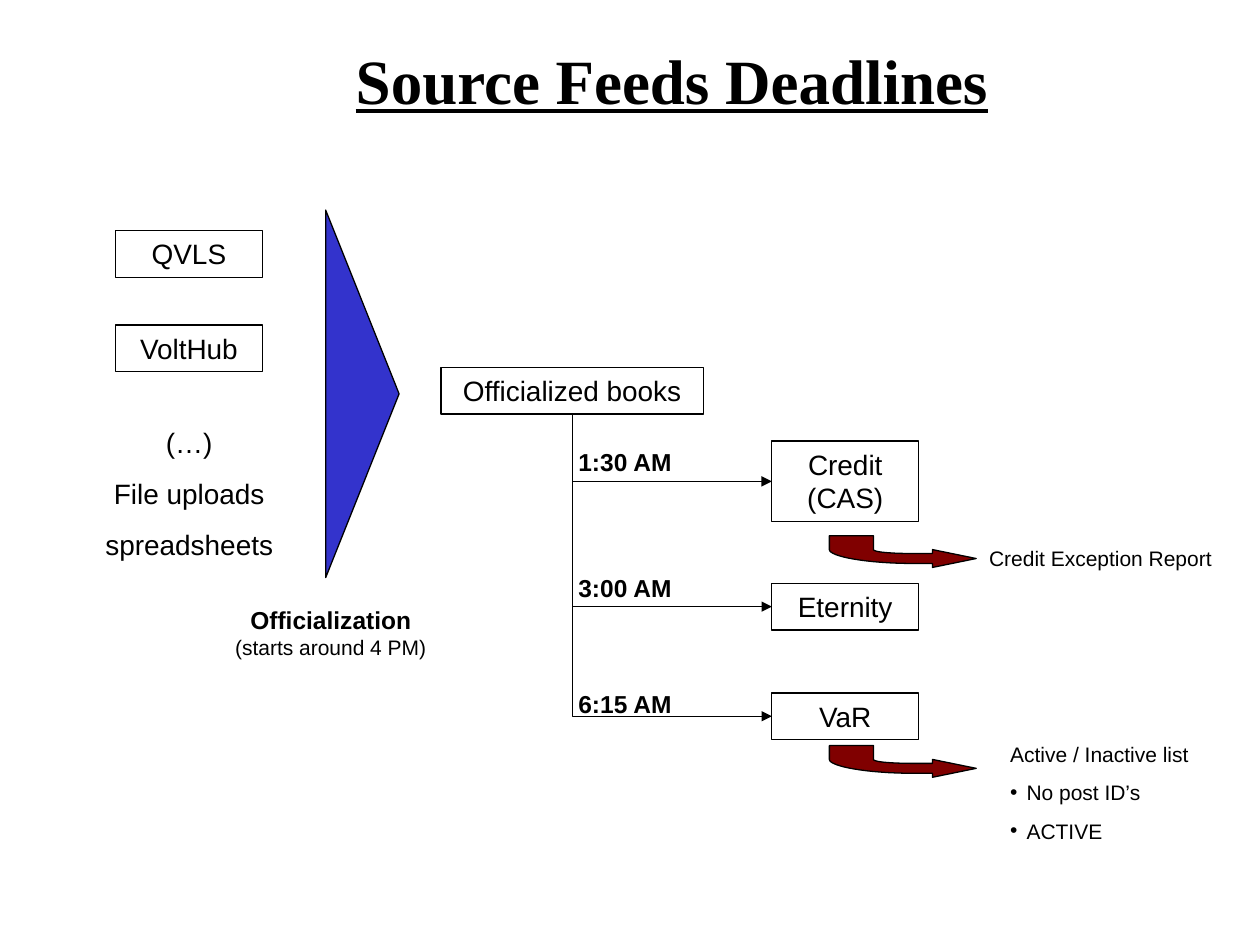
import pptx
import pptx.dml.color
import pptx.enum.shapes
import pptx.enum.text
import pptx.oxml.ns
import pptx.util
from lxml import etree

Cm, Pt, qn = pptx.util.Cm, pptx.util.Pt, pptx.oxml.ns.qn
SHAPES = pptx.enum.shapes.MSO_SHAPE
ALIGN = pptx.enum.text.PP_ALIGN
BLACK, BLUE, MAROON = "000000", "3333CC", "800000"

TITLE = "Source Feeds Deadlines"
SOURCES = ["QVLS", "VoltHub"]
UPLOADS = ["(…)", "File uploads", "spreadsheets"]
BOOKS = "Officialized books"
OFFICIALIZATION = [("Officialization ", 14, True), ("(starts around 4 PM)", 12, False)]
FEEDS = [
    ("1:30 AM", 8.89, "Credit (CAS)", 8.89, 1.63),
    ("3:00 AM", 11.43, "Eternity", 11.76, 0.94),
    ("6:15 AM", 13.76, "VaR", 13.97, 0.94),
]
CREDIT_REPORT = "Credit Exception Report"
VAR_REPORT = ["Active / Inactive list", "No post ID’s", "ACTIVE"]

SOURCE_X, SOURCE_Y, SOURCE_STEP = 2.33, 4.65, 1.9
BOX_W, BOX_H = 2.96, 0.94
BOOKS_X, BOOKS_Y, BOOKS_W = 8.89, 7.41, 5.29
TARGET_X = 15.56
ARROW_X, ARROW_TOPS = 16.72, (10.8, 15.03)
ARROW_OUTER = [(0, 0.28), (0, 0.42), (0.76, 0.56), (1.69, 0.56)]
ARROW_HEAD = [(2.08, 0.56), (2.08, 0.64), (2.96, 0.46), (2.08, 0.28), (2.08, 0.36)]
ARROW_INNER = [(1.69, 0.36), (1.24, 0.36), (0.89, 0.33), (0.89, 0.28)]


def color(hex_code):
    return pptx.dml.color.RGBColor.from_string(hex_code)


def write(frame, paragraphs, align=ALIGN.CENTER, before=10, font="Arial", underline=None):
    """Fill a text frame with paragraphs, each a list of (text, size, bold) runs."""
    frame.word_wrap = True
    for number, runs in enumerate(paragraphs):
        paragraph = frame.add_paragraph() if number else frame.paragraphs[0]
        paragraph.alignment, paragraph.space_before = align, Pt(before)
        for text, size, bold in runs:
            run = paragraph.add_run()
            run.text = text
            run.font.name, run.font.size = font, Pt(size)
            run.font.bold, run.font.underline = bold, underline
            run.font.color.rgb = color(BLACK)


def outline(shape, fill=None):
    shape.shadow.inherit = False
    if fill:
        shape.fill.solid()
        shape.fill.fore_color.rgb = color(fill)
    else:
        shape.fill.background()
    shape.line.color.rgb, shape.line.width = color(BLACK), Pt(0.75)


def add_box(slide, text, *place):
    box = slide.shapes.add_shape(SHAPES.RECTANGLE, *map(Cm, place))
    outline(box)
    box.text_frame.vertical_anchor = pptx.enum.text.MSO_ANCHOR.TOP
    write(box.text_frame, [[(text, 16, False)]])


def add_label(slide, place, paragraphs, **style):
    label = slide.shapes.add_textbox(*map(Cm, place))
    write(label.text_frame, paragraphs, **style)


def add_feed_line(slide, x, y, end_x, end_y):
    """Draw a line down, then right, ending in an arrowhead."""
    run, drop = end_x - x, end_y - y
    left, top = x + (run - drop) / 2, y + (drop - run) / 2
    line = slide.shapes.add_connector(
        pptx.enum.shapes.MSO_CONNECTOR.ELBOW,
        *map(Cm, (left, top, left + drop, top + run)))
    line.line.color.rgb, line.line.width = color(BLACK), Pt(0.75)
    properties = line._element.spPr
    properties.find(qn("a:prstGeom")).set("prst", "bentConnector2")
    transform = properties.find(qn("a:xfrm"))
    transform.set("rot", "16200000")
    transform.set("flipH", "1")
    etree.SubElement(properties.find(qn("a:ln")), qn("a:tailEnd"), type="triangle")
    etree.SubElement(properties, qn("a:effectLst"))


def curve(points, steps=16):
    """Return points along a cubic curve."""
    weights = [((1 - t) ** 3, 3 * t * (1 - t) ** 2, 3 * t * t * (1 - t), t ** 3)
               for t in (step / steps for step in range(steps + 1))]
    return [tuple(sum(w * point[axis] for w, point in zip(row, points)) for axis in (0, 1))
            for row in weights]


def add_report_arrow(slide, x, y):
    corners = curve(ARROW_OUTER) + ARROW_HEAD + curve(ARROW_INNER) + [(0.89, 0)]
    builder = slide.shapes.build_freeform(Cm(x), Cm(y))
    builder.add_line_segments([(Cm(x + dx), Cm(y + dy)) for dx, dy in corners], close=True)
    outline(builder.convert_to_shape(), MAROON)


def place_holder(holder, *place):
    holder.left, holder.top, holder.width, holder.height = map(Cm, place)
    holder.text_frame.auto_size = pptx.enum.text.MSO_AUTO_SIZE.NONE
    return holder.text_frame


def add_var_report(holder):
    frame = place_holder(holder, 20.11, 14.82, 4.23, 2.31)
    write(frame, [[(text, 12, False)] for text in VAR_REPORT], ALIGN.LEFT, 7.5)
    for number, paragraph in enumerate(frame.paragraphs):
        properties = paragraph._p.get_or_add_pPr()
        properties.set("marL", str(Cm(0.33)))
        properties.set("indent", str(-Cm(0.33)))
        if number:
            etree.SubElement(properties, qn("a:buChar"), char="•")
        else:
            etree.SubElement(properties, qn("a:buNone"))


def main():
    deck = pptx.Presentation()
    deck.slide_width, deck.slide_height = Cm(25.4), Cm(19.05)
    slide = deck.slides.add_slide(deck.slide_layouts[1])
    heading = place_holder(slide.shapes.title, 2.75, 0, 21.59, 3.18)
    write(heading, [[(TITLE, 36, True)]], before=0, font="Times New Roman", underline=True)

    for row, source in enumerate(SOURCES):
        add_box(slide, source, SOURCE_X, SOURCE_Y + row * SOURCE_STEP, BOX_W, BOX_H)
    add_label(slide, (1.59, 8.46, 4.45, 3), [[(text, 16, False)] for text in UPLOADS])

    funnel = slide.shapes.add_shape(
        SHAPES.ISOSCELES_TRIANGLE, *map(Cm, (3.6, 7.2, 7.41, 1.48)))
    funnel.rotation = 90
    outline(funnel, BLUE)
    add_label(slide, (4.23, 12.07, 4.88, 1.37), [OFFICIALIZATION], before=7.5)

    add_box(slide, BOOKS, BOOKS_X, BOOKS_Y, BOOKS_W, BOX_H)
    for time, time_y, target, target_y, height in FEEDS:
        add_box(slide, target, TARGET_X, target_y, BOX_W, height)
        add_feed_line(slide, BOOKS_X + BOOKS_W / 2, BOOKS_Y + BOX_H,
                      TARGET_X, target_y + height / 2)
        add_label(slide, (10.16, time_y, 4.88, 0.86), [[(time, 14, True)]], before=8.8)

    for arrow_y in ARROW_TOPS:
        add_report_arrow(slide, ARROW_X, arrow_y)
    add_label(slide, (19.69, 10.88, 5.29, 0.76), [[(CREDIT_REPORT, 12, False)]],
              align=ALIGN.LEFT, before=7.5)
    add_var_report(slide.placeholders[1])
    deck.save("out.pptx")


if __name__ == "__main__":
    main()
